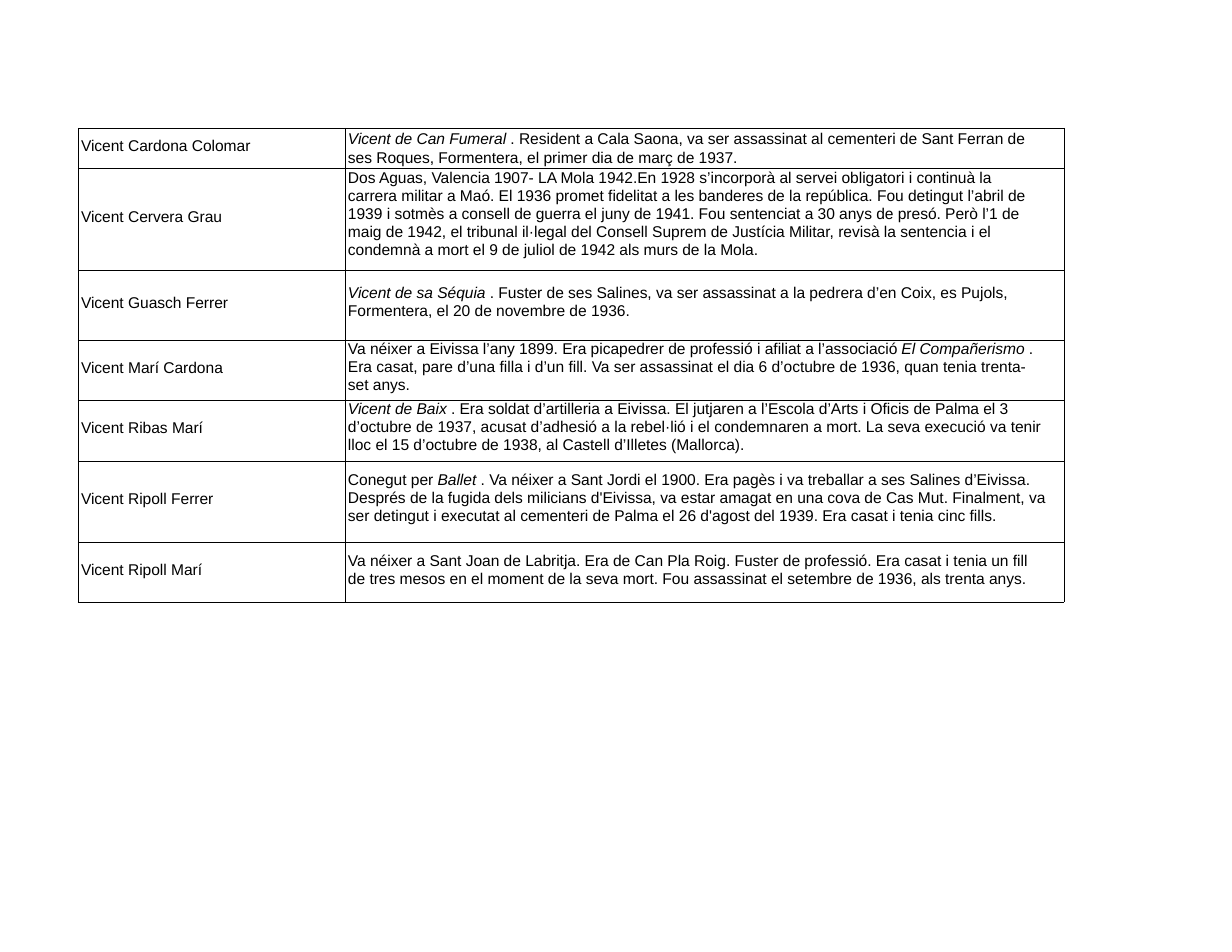
from dataclasses import dataclass

from lxml import etree
from pptx import Presentation
from pptx import util as u
from pptx.dml.color import RGBColor
from pptx.enum import text
from pptx.oxml.ns import qn

SCALE = 914400 / 112


@dataclass(frozen=True)
class Theme:
    font: str = "Arial"
    size: float = 10
    ink: str = "000000"
    border: float = 0.25
    spacing: float = 1.04


@dataclass(frozen=True)
class Person:
    name: str
    biography: tuple
    height: int
    top: int = 0
    right: int = 8
    spacing: object = Theme.spacing


THEME = Theme()
COLUMNS = (267, 719)
PEOPLE = (
    Person("Vicent Cardona Colomar", (
        ("Vicent de Can Fumeral ", True),
        (". Resident a Cala Saona, va ser assassinat al cementeri de Sant Ferran de "
         "ses Roques, Formentera, el primer dia de març de 1937.", False),
    ), 40, right=24, spacing=u.Pt(12.5)),
    Person("Vicent Cervera Grau", (
        ("Dos Aguas, Valencia 1907- LA Mola 1942.En 1928 s’incorporà al servei "
         "obligatori i continuà la carrera militar a Maó. El 1936 promet fidelitat "
         "a les banderes de la república. Fou detingut l’abril de 1939 i sotmès a "
         "consell de guerra el juny de 1941. Fou sentenciat a 30 anys de presó. Però "
         "l’1 de maig de 1942, el tribunal il·legal del Consell Suprem de Justícia "
         "Militar, revisà la sentencia i el condemnà a mort el 9 de juliol de 1942 "
         "als murs de la Mola.", False),
    ), 102, top=1, right=28),
    Person("Vicent Guasch Ferrer", (
        ("Vicent de sa Séquia ", True),
        (". Fuster de ses Salines, va ser assassinat a la pedrera d’en Coix, es "
         "Pujols, Formentera, el 20 de novembre de 1936.", False),
    ), 70, top=14, right=24),
    Person("Vicent Marí Cardona", (
        ("Va néixer a Eivissa l’any 1899. Era picapedrer de professió i afiliat a "
         "l’associació ", False),
        ("El Compañerismo ", True),
        (". Era casat, pare d’una filla i d’un fill. Va ser assassinat el dia 6 "
         "d’octubre de 1936, quan tenia trenta- set anys.", False),
    ), 60, right=20),
    Person("Vicent Ribas Marí", (
        ("Vicent de Baix ", True),
        (". Era soldat d’artilleria a Eivissa. El jutjaren a l’Escola d’Arts i "
         "Oficis de Palma el 3 d’octubre de 1937, acusat d’adhesió a la rebel·lió i "
         "el condemnaren a mort. La seva execució va tenir lloc el 15 d’octubre de "
         "1938, al Castell d’Illetes (Mallorca).", False),
    ), 61),
    Person("Vicent Ripoll Ferrer", (
        ("Conegut per ", False),
        ("Ballet ", True),
        (". Va néixer a Sant Jordi el 1900. Era pagès i va treballar a ses Salines "
         "d’Eivissa. Després de la fugida dels milicians d'Eivissa, va estar amagat "
         "en una cova de Cas Mut. Finalment, va ser detingut i executat al cementeri "
         "de Palma el 26 d'agost del 1939. Era casat i tenia cinc fills.", False),
    ), 81, top=10),
    Person("Vicent Ripoll Marí", (
        ("Va néixer a Sant Joan de Labritja. Era de Can Pla Roig. Fuster de "
         "professió. Era casat i tenia un fill de tres mesos en el moment de la seva "
         "mort. Fou assassinat el setembre de 1936, als trenta anys.", False),
    ), 60, top=10, right=24),
)


def px(length):
    return u.Emu(round(length * SCALE))


def set_borders(cell):
    properties = cell._tc.get_or_add_tcPr()
    for index, side in enumerate(("a:lnL", "a:lnR", "a:lnT", "a:lnB")):
        line = etree.Element(qn(side), w=str(u.Pt(THEME.border)))
        fill = etree.SubElement(line, qn("a:solidFill"))
        etree.SubElement(fill, qn("a:srgbClr"), val=THEME.ink)
        properties.insert(index, line)


def fill_cell(cell, runs, anchor, spacing=1.0, top=0, right=0, bottom=0):
    formats = {
        "margin_left": px(3),
        "margin_top": px(top),
        "margin_right": px(right),
        "margin_bottom": px(bottom),
        "vertical_anchor": anchor,
    }
    for name, value in formats.items():
        setattr(cell, name, value)
    cell.fill.background()
    set_borders(cell)
    paragraph = cell.text_frame.paragraphs[0]
    paragraph.line_spacing = spacing
    for words, italic in runs:
        run = paragraph.add_run()
        run.text = words
        font_formats = {"name": THEME.font, "size": u.Pt(THEME.size), "italic": italic}
        for name, value in font_formats.items():
            setattr(run.font, name, value)
        run.font.color.rgb = RGBColor.from_string(THEME.ink)


def add_people_table(slide, left, top, people):
    height = sum(person.height for person in people)
    frame = slide.shapes.add_table(
        len(people), len(COLUMNS), px(left), px(top), px(sum(COLUMNS)), px(height))
    table = frame.table
    table.first_row = False
    table.horz_banding = False
    for column, width in zip(table.columns, COLUMNS):
        column.width = px(width)
    for row, person in zip(table.rows, people):
        row.height = px(person.height)
        name_cell, biography_cell = row.cells
        fill_cell(name_cell, ((person.name, False),), text.MSO_ANCHOR.MIDDLE, bottom=4)
        fill_cell(biography_cell, person.biography, text.MSO_ANCHOR.TOP,
                  person.spacing, person.top, person.right)


def main():
    presentation = Presentation()
    presentation.slide_width = px(1232)
    presentation.slide_height = px(952)
    slide = presentation.slides.add_slide(presentation.slide_layouts[6])
    add_people_table(slide, 78, 128, PEOPLE)
    presentation.save("out.pptx")


if __name__ == "__main__":
    main()
